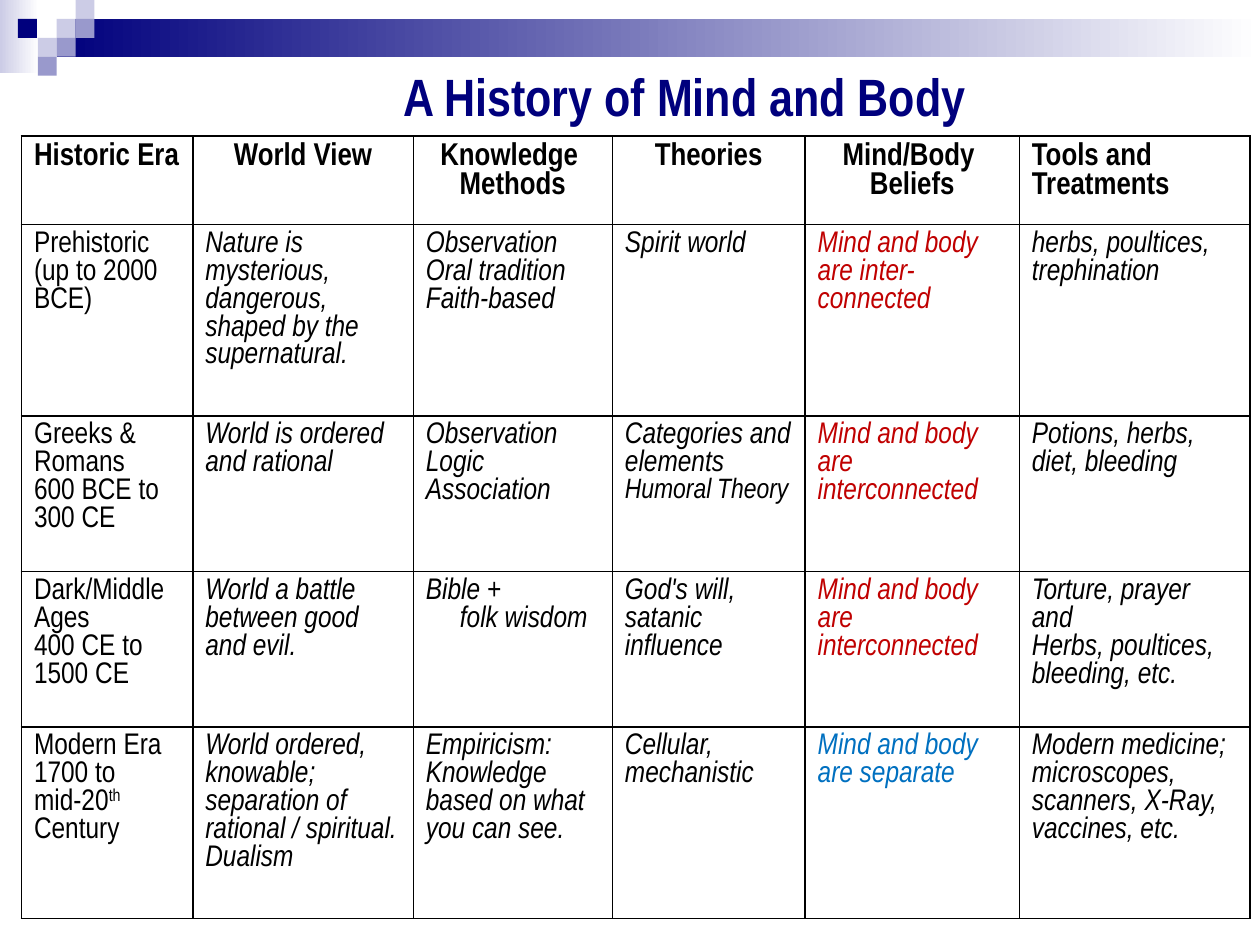
from pptx import Presentation
from pptx.dml.color import RGBColor
from pptx.enum.shapes import MSO_SHAPE as Shape
from pptx.enum.text import MSO_ANCHOR as Anchor, PP_ALIGN as Align
from pptx.oxml import parse_xml
from pptx.oxml.ns import nsdecls
from pptx.util import Inches, Pt

NAVY, LILAC, VIOLET, WHITE, BLACK = "00007D", "CCCCE6", "9999CC", "FFFFFF", "000000"
RED, BLUE = "C00000", "0070C0"


def color(hex_text):
    return RGBColor.from_string(hex_text)


def write(frame, text, size=17, ink=BLACK, bold=False, italic=False, align=Align.LEFT):
    """Each line becomes a paragraph; text between ^ marks is superscript."""
    for number, line in enumerate(text.split("\n")):
        para = frame.paragraphs[0] if number == 0 else frame.add_paragraph()
        para.alignment, para.line_spacing = align, 1.0
        for part_number, part in enumerate(line.split("^")):
            span = para.add_run()
            span.text = part
            font = span.font
            font.name, font.size, font.color.rgb = "Arial Narrow", Pt(size), color(ink)
            font.bold, font.italic = bold, italic
            if part_number % 2:
                font._element.set("baseline", "30000")


deck = Presentation()
deck.slide_width, deck.slide_height = Inches(10), Inches(7.5)
page = deck.slides.add_slide(deck.slide_layouts[6])

# Header band and checker squares: left, top, width, height, color, fades to white
step = 0.15
decor = [(0, 0, 0.31, 0.58, LILAC, True), (0.45, step, 9.55, 0.3, NAVY, True)]
squares = [(3, 1, LILAC), (4, 0, LILAC), (4, 1, VIOLET), (2, 2, LILAC),
           (0.95, 1, NAVY), (3, 2, VIOLET), (2, 3, VIOLET)]
decor += [(column * step, row * step, step, step, ink, False)
          for column, row, ink in squares]
for left, top, width, height, ink, fades in decor:
    block = page.shapes.add_shape(Shape.RECTANGLE, Inches(left), Inches(top),
                                  Inches(width), Inches(height))
    block.shadow.inherit = False
    block.line.fill.background()
    if fades:
        block.fill.gradient()
        block.fill.gradient_angle = 0
        for stop, stop_ink in zip(block.fill.gradient_stops, (ink, WHITE)):
            stop.color.rgb = color(stop_ink)
    else:
        block.fill.solid()
        block.fill.fore_color.rgb = color(ink)

# Title
title = page.shapes.add_textbox(Inches(2.58), Inches(0.5), Inches(5.44), Inches(0.51))
frame = title.text_frame
frame.word_wrap = True
frame.vertical_anchor = Anchor.MIDDLE
frame.margin_left = Inches(0.62)
frame.margin_right = frame.margin_top = frame.margin_bottom = 0
write(frame, "A History of Mind and Body", size=30, ink=NAVY, bold=True)

# Table content
rows = [
    ["Historic Era", "World View", "Knowledge \nMethods", "Theories",
     "Mind/Body \nBeliefs", "Tools and Treatments"],
    ["Prehistoric\n(up to 2000 BCE)",
     "Nature is mysterious, dangerous, shaped by the supernatural.",
     "Observation\nOral tradition\nFaith-based", "Spirit world",
     "Mind and body are inter-connected", "herbs, poultices,\ntrephination"],
    ["Greeks & Romans\n600 BCE to 300 CE", "World is ordered and rational",
     "Observation\nLogic\nAssociation", "Categories and elements\nHumoral Theory",
     "Mind and body are interconnected", "Potions, herbs, diet, bleeding"],
    ["Dark/Middle Ages\n400 CE to 1500 CE", "World a battle between good and evil.",
     "Bible +\nfolk wisdom", "God's will, satanic influence",
     "Mind and body are interconnected",
     "Torture, prayer and\nHerbs, poultices, bleeding, etc."],
    ["Modern Era\n1700 to mid-20^th^ Century",
     "World ordered, knowable;\nseparation of rational / spiritual.\nDualism",
     "Empiricism: Knowledge based on what you can see.", "Cellular,\nmechanistic",
     "Mind and body are separate",
     "Modern medicine;\nmicroscopes, scanners, X-Ray, vaccines, etc."],
]
widths = [1.36, 1.75, 1.58, 1.53, 1.7, 1.83]
heights = [0.7, 1.52, 1.23, 1.23, 1.52]

# Table grid
table = page.shapes.add_table(len(rows), len(widths), Inches(0.17), Inches(1.08),
                              Inches(sum(widths)), Inches(sum(heights))).table
table.first_row = table.horz_banding = False
for column, width in zip(table.columns, widths):
    column.width = Inches(width)
for row, height in zip(table.rows, heights):
    row.height = Inches(height)

# Cells: bold header, upright eras, italic body, colored beliefs
for r, texts in enumerate(rows):
    for c, text in enumerate(texts):
        cell = table.cell(r, c)
        if r == 0:
            write(cell.text_frame, text, size=18, bold=True,
                  align=Align.CENTER if 0 < c < 5 else Align.LEFT)
        else:
            ink = BLACK if c != 4 else BLUE if r == 4 else RED
            write(cell.text_frame, text, ink=ink, italic=c > 0)
        properties = cell._tc.get_or_add_tcPr()
        for side in ("lnL", "lnR", "lnT", "lnB"):
            properties.append(parse_xml(
                f'<a:{side} {nsdecls("a")} w="12700"><a:solidFill>'
                f'<a:srgbClr val="{BLACK}"/></a:solidFill></a:{side}>'))
        cell.fill.background()

# Smaller theory line and indented method line
theory = table.cell(2, 3).text_frame.paragraphs[1]
theory.runs[0].font.size = Pt(16)
method = table.cell(3, 2).text_frame.paragraphs[1]
method._p.get_or_add_pPr().set("marL", str(Inches(0.27)))

deck.save("out.pptx")
